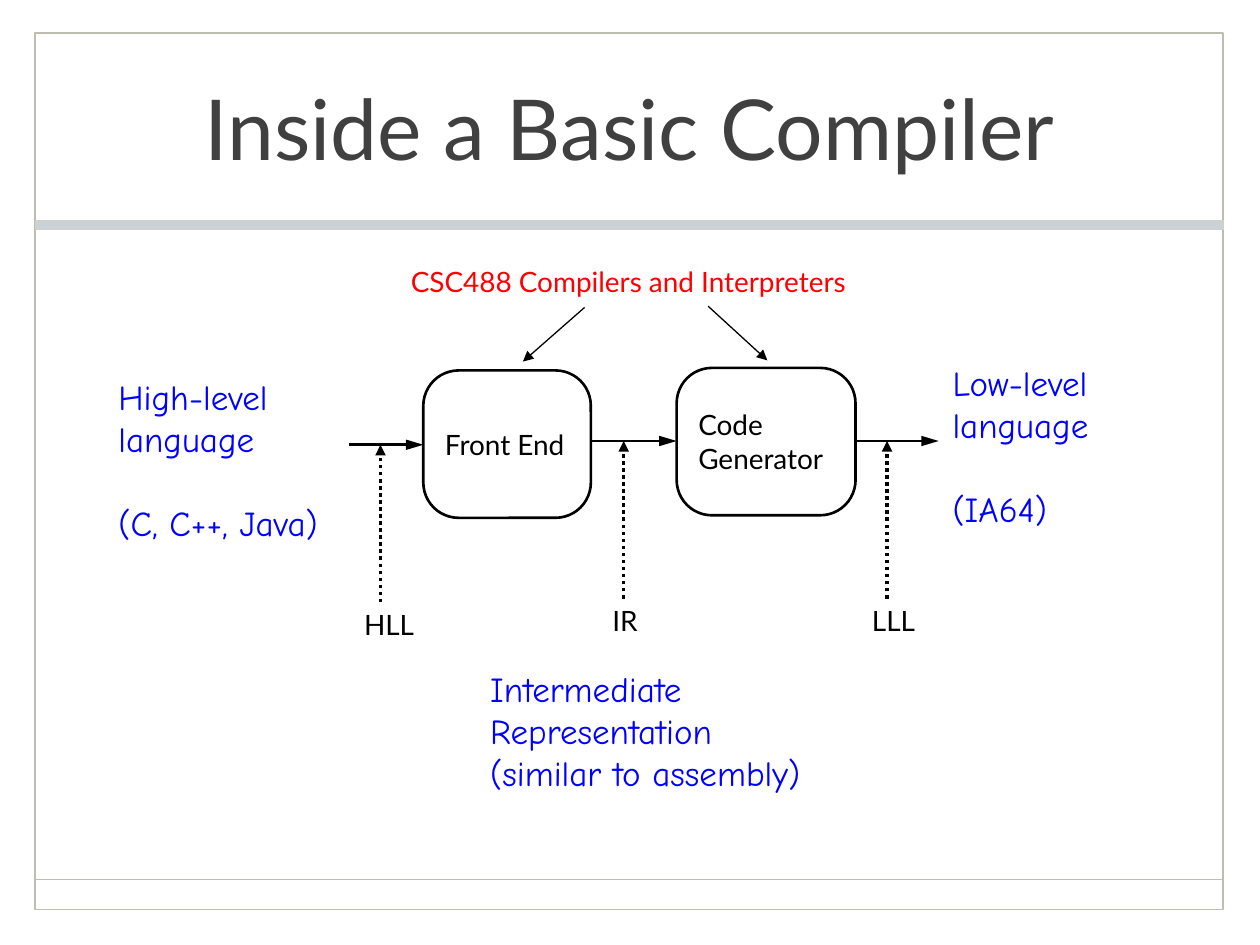
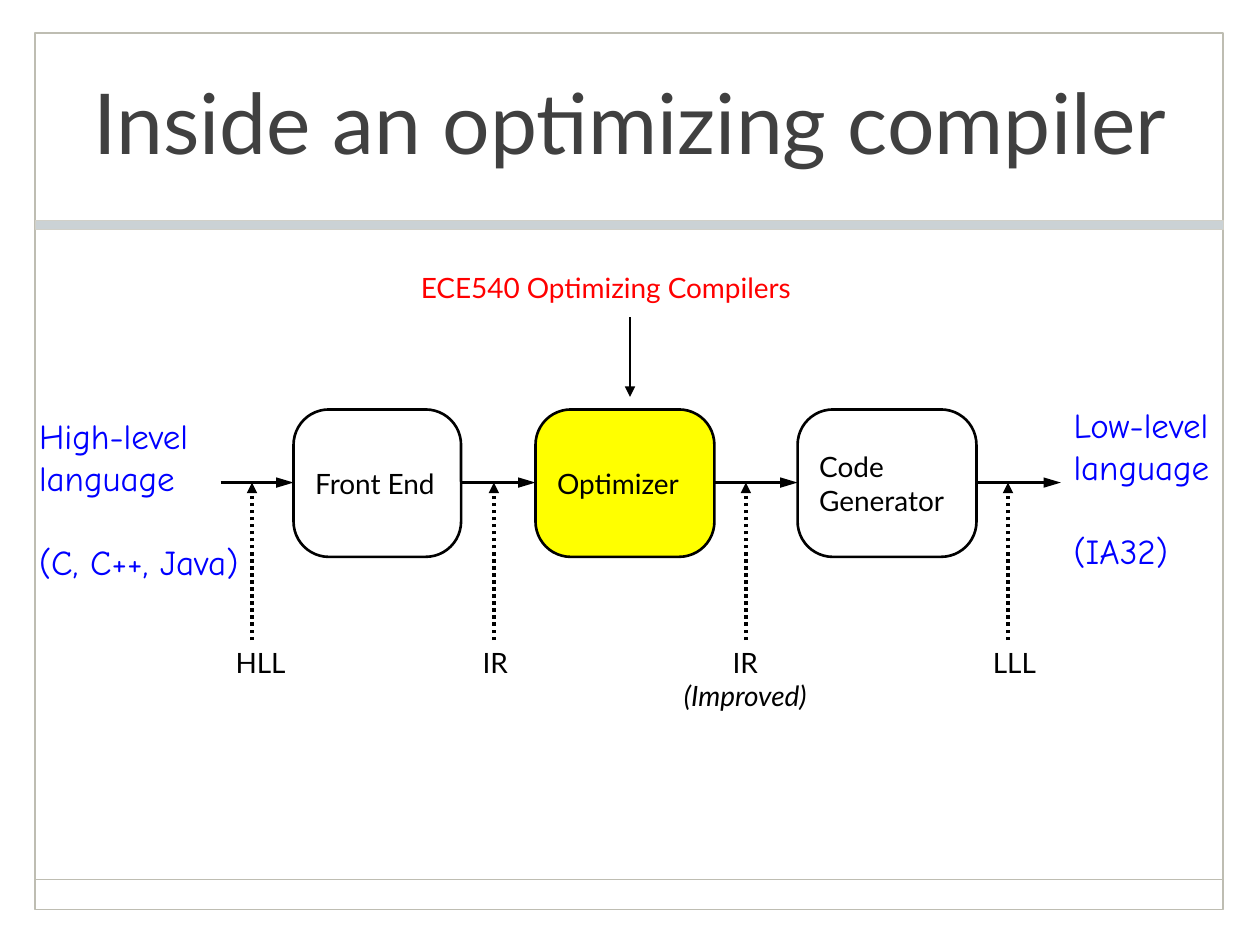
"""Build two slides showing the stages inside basic and optimizing compilers."""

from dataclasses import dataclass
from typing import Optional

from lxml.etree import SubElement
from pptx import Presentation
from pptx.dml.color import RGBColor
from pptx.enum.dml import MSO_LINE
from pptx.enum.shapes import MSO_CONNECTOR, MSO_SHAPE
from pptx.enum.text import MSO_ANCHOR, MSO_AUTO_SIZE, PP_ALIGN
from pptx.oxml.ns import qn
from pptx.shapes.connector import Connector
from pptx.slide import Slide
from pptx.text.text import TextFrame
from pptx.util import Inches, Pt


@dataclass(frozen=True)
class TextStyle:
    font: str
    size: int
    color: RGBColor
    align: PP_ALIGN = PP_ALIGN.LEFT


@dataclass(frozen=True)
class Theme:
    ink: RGBColor = RGBColor(0x00, 0x00, 0x00)
    frame: RGBColor = RGBColor(0xBE, 0xBD, 0xB2)
    band: RGBColor = RGBColor(0xCB, 0xD2, 0xD5)
    band_edge: RGBColor = RGBColor(0xD1, 0xD0, 0xC8)
    highlight: RGBColor = RGBColor(0xFF, 0xFF, 0x00)
    title: TextStyle = TextStyle("Lato", 48, RGBColor(0x40, 0x40, 0x40), PP_ALIGN.CENTER)
    label: TextStyle = TextStyle("Lato", 16, RGBColor(0x00, 0x00, 0x00))
    centered_label: TextStyle = TextStyle("Lato", 16, RGBColor(0x00, 0x00, 0x00), PP_ALIGN.CENTER)
    course: TextStyle = TextStyle("Lato", 16, RGBColor(0xFF, 0x00, 0x00))
    remark: TextStyle = TextStyle("Comic Neue", 20, RGBColor(0x00, 0x00, 0xFF))


THEME = Theme()
FRAME_LEFT, FRAME_TOP, FRAME_WIDTH, FRAME_HEIGHT = 0.28, 0.26, 9.43, 6.96
STAGE_HEIGHT = 1.17
PROBE_OFFSET, PROBE_LENGTH = 0.25, 1.25
REMARK_GAP = 24


@dataclass(frozen=True)
class Caption:
    text: str
    left: float
    top: float
    width: float
    height: float
    style: TextStyle
    last_gap: int = 0
    italic_last: bool = False


@dataclass(frozen=True)
class Stage:
    text: str
    left: float
    top: float
    width: float = 1.42
    fill: Optional[RGBColor] = None


@dataclass(frozen=True)
class Arrow:
    start: tuple[float, float]
    end: tuple[float, float]


@dataclass(frozen=True)
class ProbeLabel:
    text: str
    shift: float
    width: float
    height: float = 0.33
    style: TextStyle = THEME.label
    italic_last: bool = False


@dataclass(frozen=True)
class Flow:
    start: float
    end: float
    level: float
    label: ProbeLabel


@dataclass(frozen=True)
class CompilerSlide:
    title: Caption
    stages: list[Stage]
    flows: list[Flow]
    captions: list[Caption]
    pointers: list[Arrow]


HLL = ProbeLabel("HLL", -0.22, 0.61)
IR = ProbeLabel("IR", -0.18, 0.41)
LLL = ProbeLabel("LLL", -0.21, 0.59)
IMPROVED_IR = ProbeLabel("IR\n(Improved)", -0.6, 1.19, 0.63, THEME.centered_label, True)


def source_remark(left: float, top: float) -> Caption:
    """Describe the remark about the input language."""
    return Caption("High-level\nlanguage\n(C, C++, Java)", left, top, 1.93, 1.44, THEME.remark, REMARK_GAP)


def target_remark(machine: str, left: float, top: float) -> Caption:
    """Describe the remark about the output language."""
    return Caption(f"Low-level\nlanguage\n({machine})", left, top, 1.39, 1.44, THEME.remark, REMARK_GAP)


SLIDES = [
    CompilerSlide(
        title=Caption("Inside a Basic Compiler", 0.98, 0.27, 8.03, 1.47, THEME.title),
        stages=[
            Stage("Front End", 3.36, 2.94, 1.33),
            Stage("Code\nGenerator", 5.37, 2.92),
        ],
        flows=[
            Flow(2.77, 3.36, 3.53, HLL),
            Flow(4.7, 5.37, 3.5, IR),
            Flow(6.79, 7.45, 3.5, LLL),
        ],
        captions=[
            source_remark(0.85, 2.94),
            target_remark("IA64", 7.47, 2.83),
            Caption("Intermediate\nRepresentation\n(similar to assembly)", 3.8, 5.26, 2.88, 1.1, THEME.remark),
            Caption("CSC488 Compilers and Interpreters", 3.17, 2.06, 4.02, 0.33, THEME.course),
        ],
        pointers=[Arrow((4.64, 2.44), (4.15, 2.87)), Arrow((5.62, 2.43), (6.09, 2.86))],
    ),
    CompilerSlide(
        title=Caption("Inside an optimizing compiler", 0.5, 0.42, 9, 1.08, THEME.title),
        stages=[
            Stage("Front End", 2.33, 3.25, 1.33),
            Stage("Optimizer", 4.25, 3.25, fill=THEME.highlight),
            Stage("Code\nGenerator", 6.33, 3.25),
        ],
        flows=[
            Flow(1.75, 2.33, 3.83, HLL),
            Flow(3.67, 4.25, 3.83, IR),
            Flow(5.67, 6.33, 3.83, IMPROVED_IR),
            Flow(7.75, 8.42, 3.83, LLL),
        ],
        captions=[
            source_remark(0.22, 3.25),
            target_remark("IA32", 8.43, 3.16),
            Caption("ECE540 Optimizing Compilers", 3.25, 2.11, 3.46, 0.33, THEME.course),
        ],
        pointers=[Arrow((5, 2.52), (5, 3.15))],
    ),
]


def write_lines(frame: TextFrame, text: str, style: TextStyle) -> None:
    """Write one styled paragraph per line of text."""
    frame.text = text
    for paragraph in frame.paragraphs:
        paragraph.alignment = style.align
        paragraph.font.name = style.font
        paragraph.font.size = Pt(style.size)
        paragraph.font.color.rgb = style.color


def set_tight_margins(frame: TextFrame) -> None:
    """Use the narrow diagram margins without wrapping."""
    frame.word_wrap = False
    frame.margin_left = frame.margin_right = Inches(0.09)
    frame.margin_top = frame.margin_bottom = Inches(0.04)


def draw_title(slide: Slide, title: Caption) -> None:
    """Draw the centred slide title."""
    box = slide.shapes.add_textbox(
        Inches(title.left), Inches(title.top), Inches(title.width), Inches(title.height)
    )
    box.text_frame.word_wrap = True
    box.text_frame.vertical_anchor = MSO_ANCHOR.MIDDLE
    write_lines(box.text_frame, title.text, title.style)


def draw_caption(slide: Slide, caption: Caption) -> None:
    """Draw a text box that grows with its text."""
    box = slide.shapes.add_textbox(
        Inches(caption.left), Inches(caption.top), Inches(caption.width), Inches(caption.height)
    )
    frame = box.text_frame
    set_tight_margins(frame)
    frame.auto_size = MSO_AUTO_SIZE.SHAPE_TO_FIT_TEXT
    write_lines(frame, caption.text, caption.style)
    last = frame.paragraphs[-1]
    if caption.last_gap:
        last.space_before = Pt(caption.last_gap)
    if caption.italic_last:
        last.font.italic = True


def draw_line(slide: Slide, line: Arrow, color: RGBColor, width: float) -> Connector:
    """Draw a straight line without a shadow."""
    connector = slide.shapes.add_connector(
        MSO_CONNECTOR.STRAIGHT, *(Inches(value) for value in line.start + line.end)
    )
    connector.line.color.rgb = color
    connector.line.width = Pt(width)
    SubElement(connector._element.spPr, qn("a:effectLst"))
    return connector


def draw_arrow(slide: Slide, arrow: Arrow, width: float, dotted: bool = False, head_length: str = "med") -> None:
    """Draw a line with a triangular head at its end."""
    connector = draw_line(slide, arrow, THEME.ink, width)
    if dotted:
        connector.line.dash_style = MSO_LINE.ROUND_DOT
    SubElement(connector.line._get_or_add_ln(), qn("a:tailEnd"), type="triangle", w="med", len=head_length)


def draw_stage(slide: Slide, stage: Stage) -> None:
    """Draw a rounded compiler stage."""
    shape = slide.shapes.add_shape(
        MSO_SHAPE.ROUNDED_RECTANGLE,
        Inches(stage.left), Inches(stage.top), Inches(stage.width), Inches(STAGE_HEIGHT),
    )
    shape.shadow.inherit = False
    shape.adjustments[0] = 0.24
    shape.line.color.rgb = THEME.ink
    shape.line.width = Pt(1.5)
    if stage.fill is None:
        shape.fill.background()
    else:
        shape.fill.solid()
        shape.fill.fore_color.rgb = stage.fill
    set_tight_margins(shape.text_frame)
    shape.text_frame.vertical_anchor = MSO_ANCHOR.MIDDLE
    write_lines(shape.text_frame, stage.text, THEME.label)


def draw_flow(slide: Slide, flow: Flow) -> None:
    """Draw a flow arrow with its dotted probe and label."""
    draw_arrow(slide, Arrow((flow.start, flow.level), (flow.end, flow.level)), 1.5, head_length="lg")
    probe = flow.start + PROBE_OFFSET
    bottom = flow.level + PROBE_LENGTH
    draw_arrow(slide, Arrow((probe, bottom), (probe, flow.level)), 2, dotted=True)
    label = flow.label
    draw_caption(slide, Caption(
        label.text, probe + label.shift, bottom, label.width, label.height,
        label.style, italic_last=label.italic_last,
    ))


def draw_frame(slide: Slide) -> None:
    """Draw the border, footer rule and title band."""
    border, band = (
        slide.shapes.add_shape(
            MSO_SHAPE.RECTANGLE, Inches(FRAME_LEFT), Inches(top), Inches(FRAME_WIDTH), Inches(height)
        )
        for top, height in ((FRAME_TOP, FRAME_HEIGHT), (1.75, 0.07))
    )
    for shape, color, width in ((border, THEME.frame, 1), (band, THEME.band_edge, 0.25)):
        shape.shadow.inherit = False
        shape.line.color.rgb = color
        shape.line.width = Pt(width)
    border.fill.background()
    band.fill.solid()
    band.fill.fore_color.rgb = THEME.band
    draw_line(slide, Arrow((FRAME_LEFT, 6.98), (FRAME_LEFT + FRAME_WIDTH, 6.98)), THEME.frame, 1)


def main() -> None:
    """Build and save the presentation."""
    presentation = Presentation()
    presentation.slide_width, presentation.slide_height = Inches(10), Inches(7.5)
    for content in SLIDES:
        slide = presentation.slides.add_slide(presentation.slide_layouts[6])
        draw_frame(slide)
        draw_title(slide, content.title)
        for stage in content.stages:
            draw_stage(slide, stage)
        for flow in content.flows:
            draw_flow(slide, flow)
        for caption in content.captions:
            draw_caption(slide, caption)
        for pointer in content.pointers:
            draw_arrow(slide, pointer, 0.75)
    presentation.save("out.pptx")


if __name__ == "__main__":
    main()
